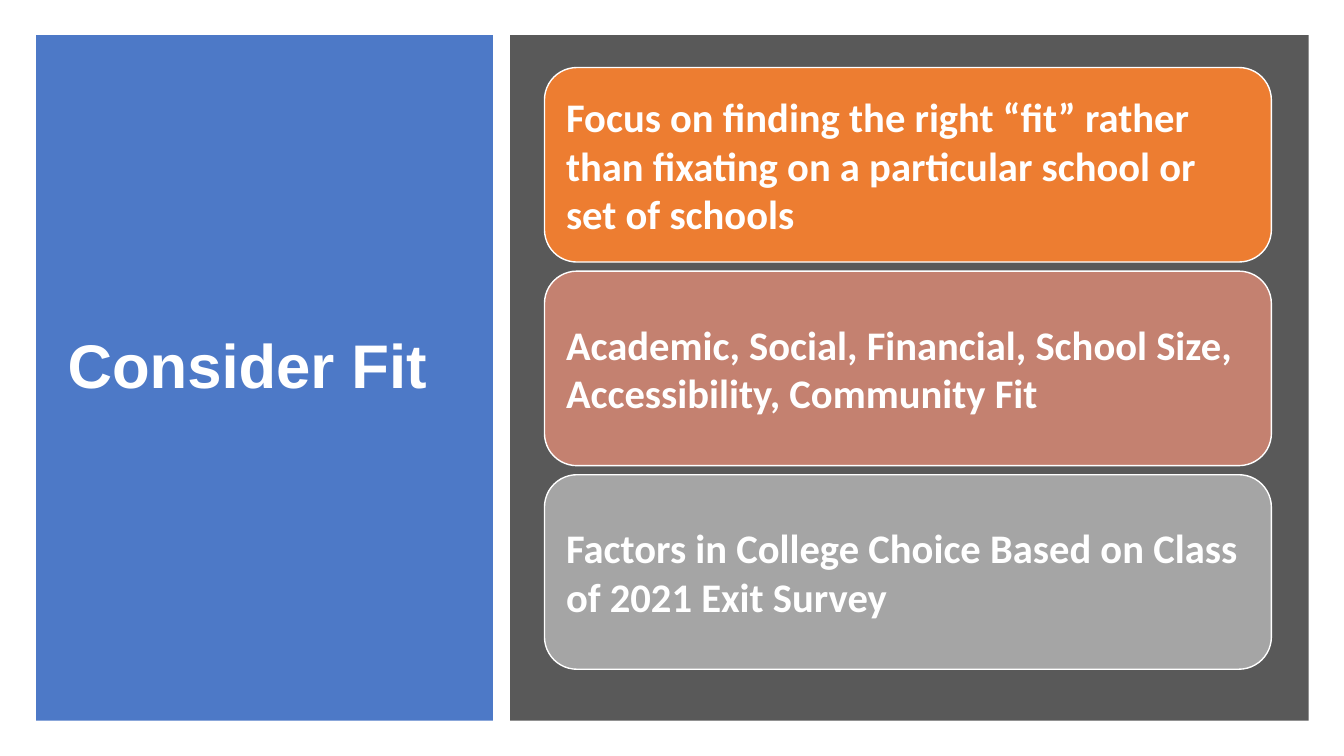
from dataclasses import dataclass

from lxml import etree
from pptx import Presentation
from pptx import util as u
from pptx.dml import color
from pptx.enum import shapes, text
from pptx.oxml import ns

PX = 9144


@dataclass(frozen=True)
class Theme:
    white: str = "FFFFFF"
    blue: str = "4472C4"
    gray: str = "595959"
    card_colors: tuple = ("ED7D31", "C48170", "A5A5A5")
    title_font: str = "Arial"
    body_font: str = "Calibri"
    title_size: int = 44
    body_size: int = 29


class FitSlide:
    def __init__(self, presentation, theme):
        self.theme = theme
        self.slide = presentation.slides.add_slide(presentation.slide_layouts[5])

    def add_words(self, frame, words, font, size):
        frame.word_wrap = True
        frame.auto_size = text.MSO_AUTO_SIZE.NONE
        frame.vertical_anchor = text.MSO_ANCHOR.MIDDLE
        paragraph = frame.paragraphs[0]
        paragraph.alignment = text.PP_ALIGN.LEFT
        run = paragraph.add_run()
        run.text = words
        run.font.name = font
        run.font.size = u.Pt(size)
        run.font.bold = True
        run.font.color.rgb = color.RGBColor.from_string(self.theme.white)
        return paragraph

    def block(self, kind, box, fill):
        shape = self.slide.shapes.add_shape(kind, *(side * PX for side in box))
        shape.shadow.inherit = False
        shape.fill.solid()
        shape.fill.fore_color.rgb = color.RGBColor.from_string(fill)
        return shape

    def panel(self, box, fill, opacity=100):
        shape = self.block(shapes.MSO_SHAPE.RECTANGLE, box, fill)
        shape.line.fill.background()
        if opacity < 100:
            fill_color = shape.element.spPr.find(".//" + ns.qn("a:srgbClr"))
            alpha = etree.SubElement(fill_color, ns.qn("a:alpha"))
            alpha.set("val", str(opacity * 1000))

    def title(self, box, words):
        title = self.slide.shapes.title
        title.left, title.top, title.width, title.height = (side * PX for side in box)
        paragraph = self.add_words(
            title.text_frame, words, self.theme.title_font, self.theme.title_size
        )
        paragraph.line_spacing = 0.9
        self.slide.shapes.element.append(title.element)

    def card(self, box, fill, words):
        shape = self.block(shapes.MSO_SHAPE.ROUNDED_RECTANGLE, box, fill)
        shape.line.color.rgb = color.RGBColor.from_string(self.theme.white)
        shape.line.width = u.Pt(1)
        frame = shape.text_frame
        frame.margin_left = frame.margin_right = 12 * PX
        frame.margin_top = frame.margin_bottom = 12 * PX
        self.add_words(frame, words, self.theme.body_font, self.theme.body_size)


def main():
    presentation = Presentation()
    presentation.slide_width = 1333 * PX
    presentation.slide_height = 750 * PX
    theme = Theme()
    page = FitSlide(presentation, theme)

    page.panel((36, 35, 453, 680), theme.blue, opacity=95)
    page.title((57, 64, 407, 604), "Consider Fit")
    page.panel((506, 35, 792, 680), theme.gray)

    messages = (
        "Focus on finding the right “fit” rather than fixating on a particular school or set of schools",
        "Academic, Social, Financial, School Size, Accessibility, Community Fit",
        "Factors in College Choice Based on Class of 2021 Exit Survey",
    )
    card_top, card_height, card_gap = 67, 193, 9
    for index, (fill, words) in enumerate(zip(theme.card_colors, messages)):
        top = card_top + index * (card_height + card_gap)
        page.card((540, top, 721, card_height), fill, words)

    presentation.save("out.pptx")


if __name__ == "__main__":
    main()
